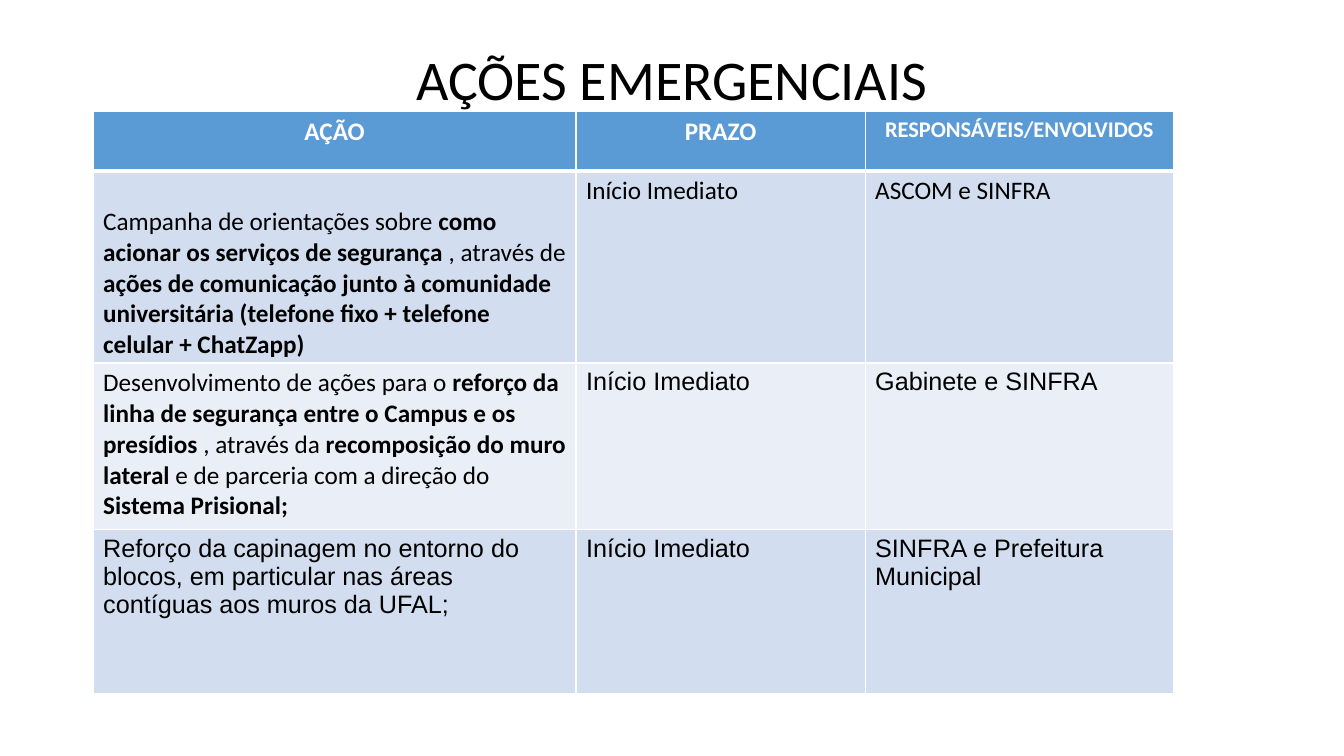
from pptx import Presentation
from pptx.dml.color import RGBColor
from pptx.enum.text import MSO_ANCHOR, PP_ALIGN
from pptx.oxml import parse_xml
from pptx.oxml.ns import nsdecls
from pptx.util import Pt

BLACK = RGBColor(0x00, 0x00, 0x00)
WHITE = RGBColor(0xFF, 0xFF, 0xFF)
HEADER_BLUE = RGBColor(0x5B, 0x9B, 0xD5)
BANDS = [RGBColor(0xD2, 0xDE, 0xEF), RGBColor(0xEA, 0xEF, 0xF7)]

COL_WIDTHS = [345, 206.5, 220.5]
ROW_HEIGHTS = [42.5, 137, 119, 117.5]
HEADERS = [("AÇÃO", 18), ("PRAZO", 18), ("RESPONSÁVEIS/ENVOLVIDOS", 16)]
DEADLINE = "Início Imediato"
CAMPAIGN = [
    ("Campanha de orientações sobre ", False),
    ("como acionar os serviços de segurança", True),
    (" , através de ", False),
    ("ações de comunicação junto à comunidade universitária "
     "(telefone fixo + telefone celular + ChatZapp)", True),
]
WALL = [
    ("Desenvolvimento de ações para o ", False),
    ("reforço da linha de segurança entre o Campus e os presídios", True),
    (" , através da ", False),
    ("recomposição do muro lateral", True),
    (" e de parceria com a direção do ", False),
    ("Sistema Prisional;", True),
]
WEEDING = [("Reforço da capinagem no entorno do blocos, em particular nas áreas "
            "contíguas aos muros da UFAL;", False)]
ACTIONS = [
    (CAMPAIGN, "ASCOM e SINFRA", "Calibri", "Calibri"),
    (WALL, "Gabinete e SINFRA", "Calibri", "Arial"),
    (WEEDING, "SINFRA e Prefeitura Municipal", "Arial", "Arial"),
]


def write(tf, runs, font, size, color, align=PP_ALIGN.LEFT):
    p = tf.paragraphs[0]
    p.alignment = align
    p.font.name, p.font.size = font, Pt(size)
    p.font.color.rgb = color
    for text, bold in runs:
        r = p.add_run()
        r.text = text
        r.font.bold = bold
    return p


def add_title(s, text):
    tf = s.shapes.add_textbox(Pt(66), Pt(29), Pt(828), Pt(59)).text_frame
    tf.word_wrap = True
    tf.vertical_anchor = MSO_ANCHOR.MIDDLE
    p = write(tf, [(text, False)], "Calibri", 40, BLACK, PP_ALIGN.CENTER)
    p.line_spacing = 0.9


def style_cell(cell, fill, top=1, bottom=1):
    tc_pr = cell._tc.get_or_add_tcPr()
    for side, width in (("L", 1), ("R", 1), ("T", top), ("B", bottom)):
        tc_pr.append(parse_xml(
            f'<a:ln{side} {nsdecls("a")} w="{Pt(width)}"><a:solidFill>'
            f'<a:srgbClr val="{WHITE}"/></a:solidFill></a:ln{side}>'))
    cell.fill.solid()
    cell.fill.fore_color.rgb = fill


def add_actions_table(s):
    table = s.shapes.add_table(
        len(ROW_HEIGHTS), len(COL_WIDTHS), Pt(66.5), Pt(79.5),
        Pt(sum(COL_WIDTHS)), Pt(sum(ROW_HEIGHTS))).table
    for column, width in zip(table.columns, COL_WIDTHS):
        column.width = Pt(width)
    for row, height in zip(table.rows, ROW_HEIGHTS):
        row.height = Pt(height)
    for cell, (text, size) in zip(table.rows[0].cells, HEADERS):
        style_cell(cell, HEADER_BLUE, bottom=3)
        write(cell.text_frame, [(text, True)], "Calibri", size, WHITE, PP_ALIGN.CENTER)
    for i, (action, owners, action_font, font) in enumerate(ACTIONS):
        contents = [(action, action_font), ([(DEADLINE, False)], font),
                    ([(owners, False)], font)]
        for cell, (runs, name) in zip(table.rows[i + 1].cells, contents):
            style_cell(cell, BANDS[i % 2], top=3 if i == 0 else 1)
            write(cell.text_frame, runs, name, 18, BLACK)
    table.cell(1, 0).margin_top = Pt(25.6)


def main():
    prs = Presentation()
    prs.slide_width, prs.slide_height = Pt(960), Pt(540)
    s = prs.slides.add_slide(prs.slide_layouts[6])
    add_title(s, "AÇÕES EMERGENCIAIS")
    add_actions_table(s)
    prs.save("out.pptx")


if __name__ == "__main__":
    main()
